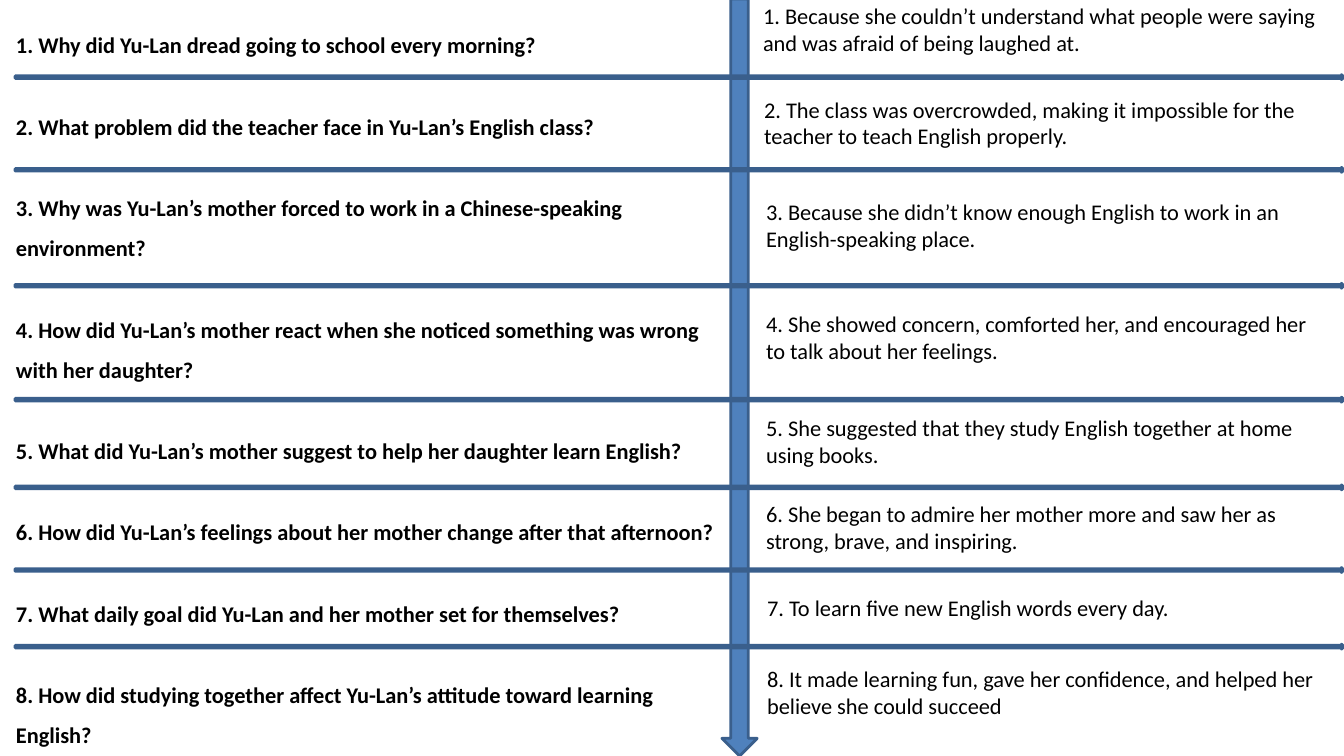
from pptx import Presentation
from pptx import util as u
from pptx.dml import color
from pptx.enum import shapes, text

COLORS = {"text": "000000", "arrow": "4F81BD", "outline": "3A5F8C"}
FONT = "Calibri"
TEXT_SIZE = 16

QUESTIONS = [
    "1. Why did Yu-Lan dread going to school every morning?",
    "2. What problem did the teacher face in Yu-Lan’s English class?",
    "3. Why was Yu-Lan’s mother forced to work in a Chinese-speaking environment?",
    "4. How did Yu-Lan’s mother react when she noticed something was wrong with her daughter?",
    "5. What did Yu-Lan’s mother suggest to help her daughter learn English?",
    "6. How did Yu-Lan’s feelings about her mother change after that afternoon?",
    "7. What daily goal did Yu-Lan and her mother set for themselves?",
    "8. How did studying together affect Yu-Lan’s attitude toward learning English?",
]

# Left, top, width, height, wording
ANSWERS = [
    (7.47, -0.03, 5.86, 0.64, "1. Because she couldn’t understand what people were saying "
                              "and was afraid of being laughed at."),
    (7.48, 0.9, 5.55, 0.64, "2. The class was overcrowded, making it impossible for the "
                            "teacher to teach English properly."),
    (7.5, 1.92, 5.54, 0.64, "3. Because she didn’t know enough English to work in an "
                            "English-speaking place."),
    (7.5, 3.03, 5.66, 0.64, "4. She showed concern, comforted her, and encouraged her "
                            "to talk about her feelings."),
    (7.5, 4.06, 5.89, 0.64, "5. She suggested that they study English together at home "
                            "using books."),
    (7.5, 4.91, 5.83, 0.64, "6. She began to admire her mother more and saw her as "
                            "strong, brave, and inspiring."),
    (7.51, 5.85, 4.24, 0.37, "7. To learn five new English words every day."),
    (7.51, 6.55, 6.07, 0.64, "8. It made learning fun, gave her confidence, and helped her "
                             "believe she could succeed"),
]
DIVIDER_TOPS = [0.74, 1.66, 2.81, 3.94, 4.81, 5.63, 6.39]

deck = Presentation()
deck.slide_width = u.Inches(13.33)
deck.slide_height = u.Inches(7.5)
page = deck.slides.add_slide(deck.slide_layouts[6])


def add_text(left, top, width, height, lines, bold=False, line_spacing=1.0, gap=0):
    box = page.shapes.add_textbox(*map(u.Inches, (left, top, width, height)))
    frame = box.text_frame
    frame.word_wrap = True
    frame.auto_size = text.MSO_AUTO_SIZE.SHAPE_TO_FIT_TEXT
    for number, line in enumerate(lines):
        para = frame.add_paragraph() if number else frame.paragraphs[0]
        para.line_spacing = line_spacing
        para.space_before = u.Pt(gap if number else 0)
        span = para.add_run()
        span.text = line
        span.font.name = FONT
        span.font.size = u.Pt(TEXT_SIZE)
        span.font.bold = bold
        span.font.color.rgb = color.RGBColor.from_string(COLORS["text"])
    return box


def add_arrow(kind, left, top, width, height):
    arrow = page.shapes.add_shape(kind, *map(u.Inches, (left, top, width, height)))
    arrow.shadow.inherit = False
    arrow.fill.solid()
    arrow.fill.fore_color.rgb = color.RGBColor.from_string(COLORS["arrow"])
    arrow.line.color.rgb = color.RGBColor.from_string(COLORS["outline"])
    arrow.line.width = u.Pt(2)


# Questions on the left, one line of space between them
add_text(0.06, 0.13, 7.19, 7.37, QUESTIONS, bold=True, line_spacing=1.5, gap=29.3)

# Column arrow and row dividers
add_arrow(shapes.MSO_SHAPE.DOWN_ARROW, 7.16, -0.01, 0.35, 7.51)
for divider_top in DIVIDER_TOPS:
    add_arrow(shapes.MSO_SHAPE.RIGHT_ARROW, 0.15, divider_top, 13.18, 0.05)

# Answers on the right
for left, top, width, height, answer in ANSWERS:
    add_text(left, top, width, height, [answer])

deck.save("out.pptx")
